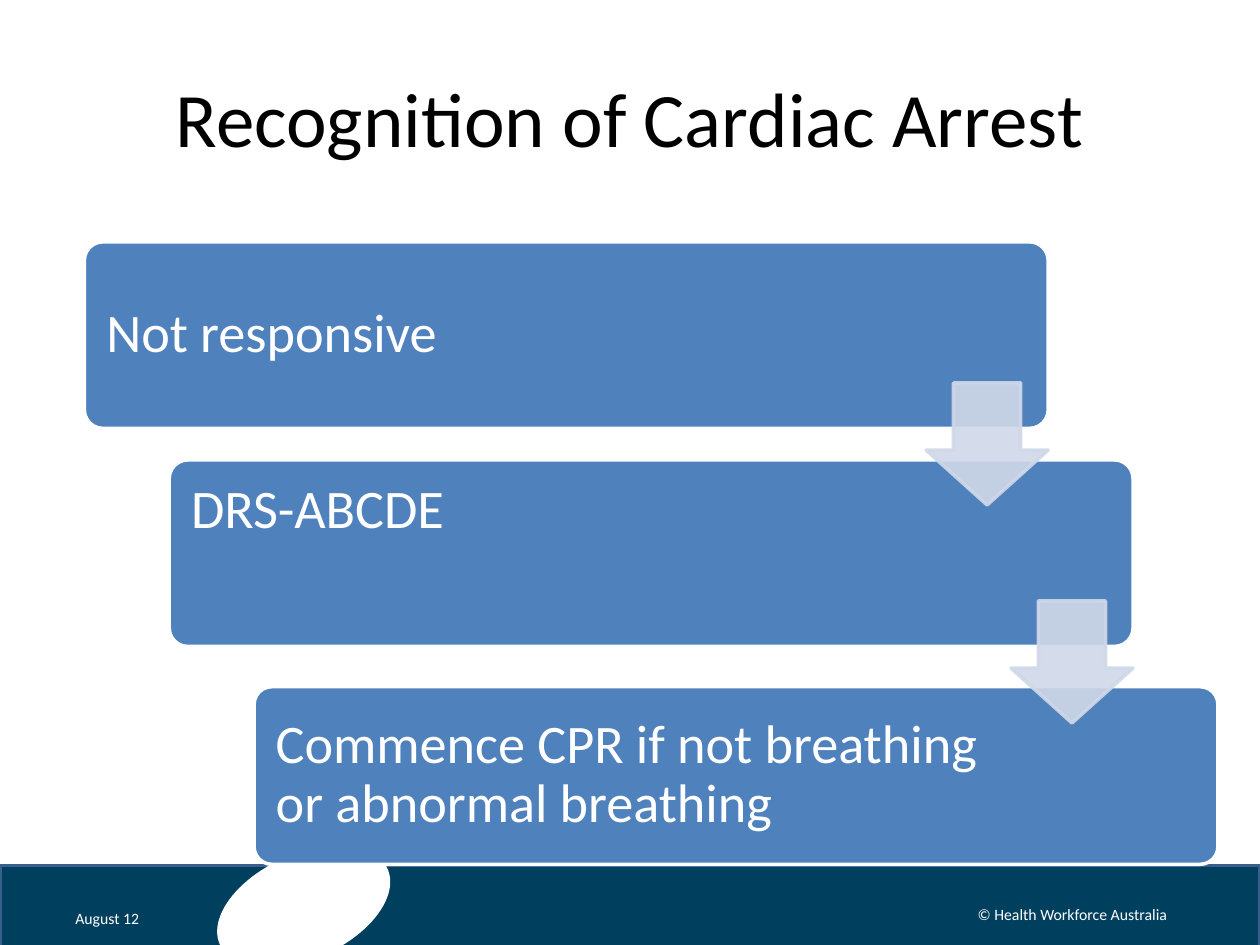
from dataclasses import dataclass

from lxml.etree import SubElement
from pptx import Presentation
from pptx.dml.color import RGBColor
from pptx.enum.shapes import MSO_SHAPE
from pptx.enum.text import MSO_ANCHOR, PP_ALIGN
from pptx.oxml.ns import qn
from pptx.util import Pt


@dataclass(frozen=True)
class Theme:
    font: str = "Calibri"
    title_size: float = 44
    step_size: float = 31
    footer_size: float = 9
    dark: RGBColor = RGBColor(0x00, 0x00, 0x00)
    light: RGBColor = RGBColor(0xFF, 0xFF, 0xFF)
    footer: RGBColor = RGBColor(0x00, 0x3F, 0x5E)
    footer_line: RGBColor = RGBColor(0x3A, 0x5F, 0x8C)
    step: RGBColor = RGBColor(0x4F, 0x81, 0xBD)
    arrow: RGBColor = RGBColor(0xD0, 0xD8, 0xE8)


THEME = Theme()

STEP_LEFT, STEP_SHIFT, STEP_WIDTH = 48.2, 48.5, 550.8
STEP_INSET, STEP_RIGHT_INSET = 9.4, 122
ARROW_SIZE, ARROW_OFFSET, ARROW_OVERLAP = 69.8, 481, 26

# text, top, height, anchor
STEPS = [
    ("Not responsive", 138.2, 106.6, MSO_ANCHOR.MIDDLE),
    ("DRS-ABCDE", 262.8, 106.6, MSO_ANCHOR.TOP),
    ("Commence CPR if not breathing or abnormal breathing",
     392.4, 101.5, MSO_ANCHOR.MIDDLE),
]


def add_shape(slide, kind, left, top, width, height, fill, line=None):
    shape = slide.shapes.add_shape(kind, Pt(left), Pt(top), Pt(width), Pt(height))
    shape.shadow.inherit = False
    shape.fill.solid()
    shape.fill.fore_color.rgb = fill
    if line is None:
        shape.line.fill.background()
    else:
        shape.line.color.rgb = line
        shape.line.width = Pt(2)
    return shape


def write_text(shape, text, size, color, alignment, anchor=MSO_ANCHOR.MIDDLE):
    text_frame = shape.text_frame
    text_frame.text = text
    text_frame.word_wrap = True
    text_frame.vertical_anchor = anchor
    paragraph = text_frame.paragraphs[0]
    paragraph.alignment = alignment
    paragraph.font.name = THEME.font
    paragraph.font.size = Pt(size)
    paragraph.font.color.rgb = color
    return paragraph


def add_label(slide, text, left, top, width, height, size, color, alignment):
    box = slide.shapes.add_textbox(Pt(left), Pt(top), Pt(width), Pt(height))
    write_text(box, text, size, color, alignment)


def add_step(slide, text, left, top, height, anchor):
    shape = add_shape(slide, MSO_SHAPE.ROUNDED_RECTANGLE, left, top,
                      STEP_WIDTH, height, THEME.step, THEME.light)
    shape.adjustments[0] = 0.1
    text_frame = shape.text_frame
    text_frame.margin_left = Pt(STEP_INSET)
    text_frame.margin_top = text_frame.margin_bottom = Pt(STEP_INSET)
    text_frame.margin_right = Pt(STEP_RIGHT_INSET)
    paragraph = write_text(shape, text, THEME.step_size, THEME.light,
                           PP_ALIGN.LEFT, anchor)
    paragraph.line_spacing = 0.9


def add_arrow(slide, left, top):
    """Add a slightly transparent arrow that leads to the next step."""
    shape = add_shape(slide, MSO_SHAPE.DOWN_ARROW, left, top,
                      ARROW_SIZE, ARROW_SIZE, THEME.arrow, THEME.arrow)
    shape.adjustments[0] = 0.55
    shape.adjustments[1] = 0.45
    for color in shape.element.spPr.iter(qn("a:srgbClr")):
        SubElement(color, qn("a:alpha"), val="90000")


def add_footer(slide):
    add_shape(slide, MSO_SHAPE.RECTANGLE, 0, 494.6, 720, 46.8,
              THEME.footer, THEME.footer_line)
    ellipse = add_shape(slide, MSO_SHAPE.OVAL, 121, 488.2, 105.1, 59.8, THEME.light)
    ellipse.rotation = 335.7
    add_label(slide, "August 12", 36, 514, 57.6, 20.9,
              THEME.footer_size, THEME.light, PP_ALIGN.LEFT)
    add_label(slide, "© Health Workforce Australia", 535.7, 508.3, 154, 28.8,
              THEME.footer_size, THEME.light, PP_ALIGN.CENTER)


def add_staircase(slide):
    lefts = [STEP_LEFT + index * STEP_SHIFT for index in range(len(STEPS))]
    for left, (text, top, height, anchor) in zip(lefts, STEPS):
        add_step(slide, text, left, top, height, anchor)
    for left, (_, top, height, _) in zip(lefts, STEPS[:-1]):
        add_arrow(slide, left + ARROW_OFFSET, top + height - ARROW_OVERLAP)


def main():
    presentation = Presentation()
    presentation.slide_width = Pt(720)
    presentation.slide_height = Pt(540)
    slide = presentation.slides.add_slide(presentation.slide_layouts[6])
    add_footer(slide)
    add_label(slide, "Recognition of Cardiac Arrest", 36, 21.6, 648, 90,
              THEME.title_size, THEME.dark, PP_ALIGN.CENTER)
    add_staircase(slide)
    presentation.save("out.pptx")


if __name__ == "__main__":
    main()
